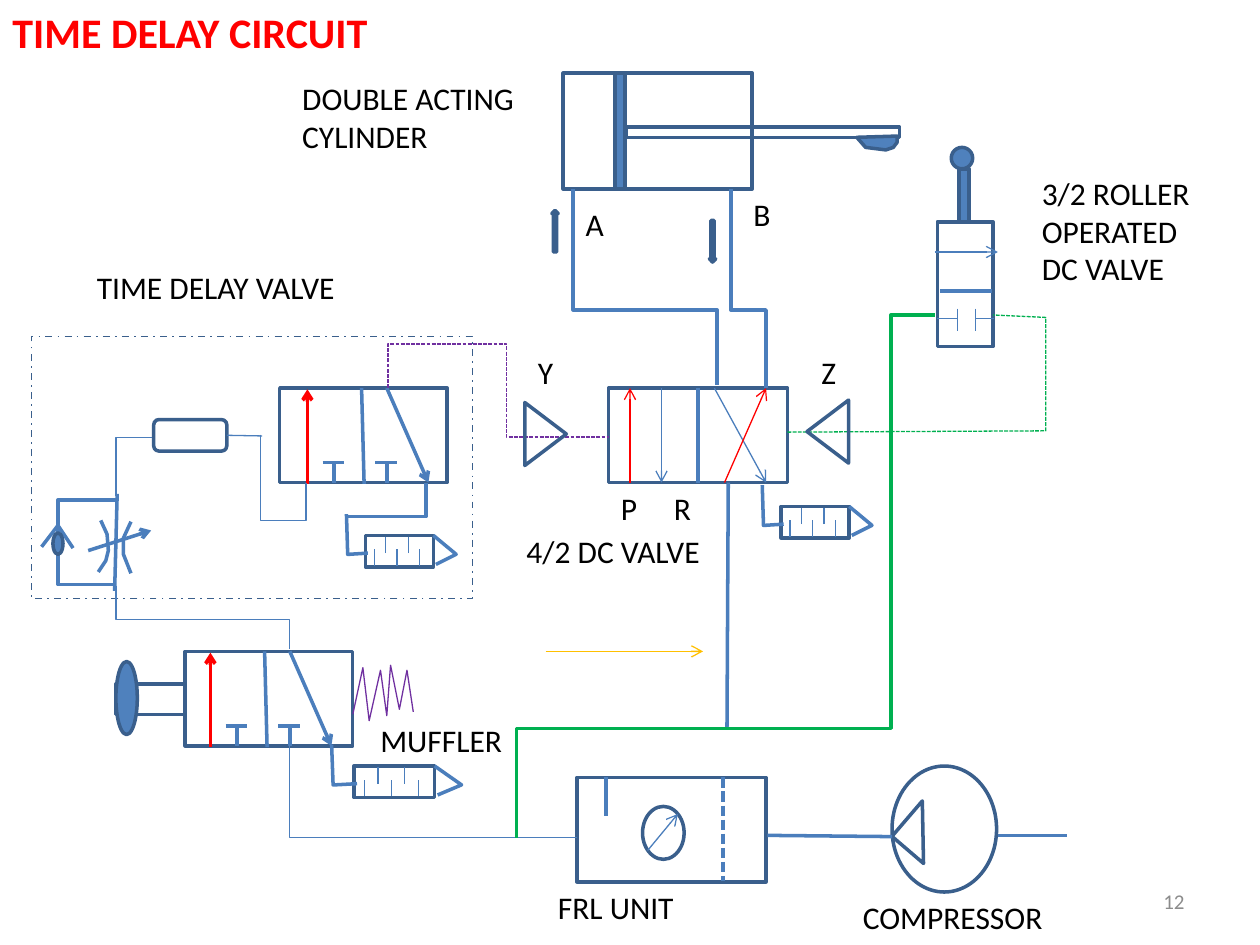
from lxml import etree
from pptx import Presentation
from pptx import util as u
from pptx.dml.color import RGBColor
from pptx.enum import dml, shapes, text
from pptx.oxml.ns import qn

Inches = u.Inches
S = shapes.MSO_SHAPE
DASH = dml.MSO_LINE.SQUARE_DOT
OUTLINE = RGBColor(0x3A, 0x5F, 0x8C)
PIPE = RGBColor(0x4B, 0x7E, 0xBC)
SOLID = RGBColor(0x4F, 0x81, 0xBD)
RED = RGBColor(0xFF, 0, 0)
GREEN = RGBColor(0, 0xB0, 0x50)
PURPLE = RGBColor(0x70, 0x30, 0xA0)
AMBER = RGBColor(0xFF, 0xC0, 0)
BLACK = RGBColor(0, 0, 0)
GREY = RGBColor(0x8C, 0x8C, 0x8C)
THIN, THICK = 0.75, 2

prs = Presentation()
prs.slide_width, prs.slide_height = Inches(10), Inches(7.5)
slide = prs.slides.add_slide(prs.slide_layouts[6])


def add_box(kind, x, y, w, h, fill=None, rot=0, width=THICK, dash=None):
    sp = slide.shapes.add_shape(kind, Inches(x), Inches(y), Inches(w), Inches(h))
    sp.shadow.inherit = False
    sp.rotation = rot
    if fill is None:
        sp.fill.background()
    else:
        sp.fill.solid()
        sp.fill.fore_color.rgb = fill
    sp.line.color.rgb = OUTLINE
    sp.line.width = u.Pt(width)
    if dash is not None:
        sp.line.dash_style = dash
    return sp


def add_path(points, color=PIPE, width=THICK, dash=None, arrow=False):
    pts = [(Inches(x), Inches(y)) for x, y in points]
    if len(pts) == 2:
        sp = slide.shapes.add_connector(shapes.MSO_CONNECTOR.STRAIGHT, *pts[0], *pts[1])
    else:
        fb = slide.shapes.build_freeform(*pts[0])
        fb.add_line_segments(pts[1:], close=False)
        sp = fb.convert_to_shape()
        sp.fill.background()
    sp.line.color.rgb = color
    sp.line.width = u.Pt(width)
    if dash is not None:
        sp.line.dash_style = dash
    sp_pr = sp._element.spPr
    if arrow:
        etree.SubElement(sp_pr.find(qn("a:ln")), qn("a:tailEnd"), type="arrow")
    etree.SubElement(sp_pr, qn("a:effectLst"))
    return sp


add_box(S.RECTANGLE, 0.25, 2.67, 3.5, 2.08, width=1, dash=dml.MSO_LINE.DASH_DOT)

valve = add_box(S.RECTANGLE, 4.83, 3.08, 1.42, 0.75)
divider = add_path([(5.54, 3.08), (5.54, 3.83)])
divider.begin_connect(valve, 0)
divider.end_connect(valve, 2)
for start, end, color in [
    ((5, 3.83), (5, 3.08), RED),
    ((5.25, 3.08), (5.25, 3.83), PIPE),
    ((5.67, 3.08), (6.08, 3.83), PIPE),
    ((5.75, 3.83), (6.08, 3.08), RED),
]:
    add_path([start, end], color, THIN, arrow=True)

for left, top, x in [(2.22, 3.08, 2.24), (1.47, 5.17, 1.47)]:
    add_box(S.RECTANGLE, left, top, 1.33, 0.75)
    add_path([(x + 0.65, top + 0.76), (x + 0.63, top)])
    add_path([(x + 0.2, top + 0.76), (x + 0.2, top + 0.01)], RED, arrow=True)
    add_path([(x + 0.83, top), (x + 1.16, top + 0.75)], arrow=True)
    for stem in (x + 0.41, x + 0.83):
        add_path([(stem, top + 0.75), (stem, top + 0.59)])
        add_path([(stem - 0.09, top + 0.59), (stem + 0.08, top + 0.59)])

for x, y, w in [(2.81, 6.08, 0.64), (6.2, 4.02, 0.54), (2.9, 4.25, 0.54)]:
    k = w / 0.54
    add_box(S.RECTANGLE, x, y, w, 0.25)
    for i in range(5):
        tick = x + k * (0.07 + 0.09 * i)
        upper = y + (0.01 if i % 2 else 0.11)
        add_path([(tick, upper + 0.13), (tick, upper)], width=THIN)
    add_path([(x + w, y), (x + 0.72 * k, y + 0.15), (x + 0.56 * k, y + 0.23)])
    add_path([(x - 0.15 * k, y - 0.17), (x - 0.14 * k, y + 0.15), (x + 0.02 * k, y + 0.14)])

add_box(S.RECTANGLE, 4.58, 6.17, 1.5, 0.83)
add_path([(5.74, 6.17), (5.74, 6.99)], dash=DASH)
add_box(S.OVAL, 5.1, 6.4, 0.33, 0.42)
add_path([(5.14, 6.75), (5.38, 6.46)], width=THIN, arrow=True)
add_path([(4.81, 6.17), (4.81, 6.48)])
add_box(S.OVAL, 7.08, 6.08, 0.83, 1)
add_box(S.RIGHT_TRIANGLE, 7.16, 6.42, 0.33, 0.37, rot=40.6)
add_path([(7.08, 6.64), (6.09, 6.63)])
add_path([(7.92, 6.63), (8.47, 6.63)])

add_box(S.RECTANGLE, 7.44, 1.76, 0.44, 0.99)
add_path([(7.46, 2.31), (7.87, 2.31)])
add_box(S.RECTANGLE, 7.61, 1.34, 0.08, 0.42, SOLID)
add_box(S.OVAL, 7.55, 1.17, 0.17, 0.17, SOLID)
add_path([(7.42, 2), (7.92, 2)], width=THIN, arrow=True)
for port, stop in [(7.44, 7.6), (7.89, 7.74)]:
    add_path([(port, 2.53), (stop, 2.53)], width=THIN)
    add_path([(stop, 2.45), (stop, 2.63)], width=THIN)

add_box(S.RECTANGLE, 4.47, 0.58, 1.5, 0.92)
add_box(S.RECTANGLE, 4.88, 0.58, 0.08, 0.92, SOLID)
add_box(S.RECTANGLE, 4.97, 1.01, 2.17, 0.08)
cam = [(6.87, 1.17), (7.03, 1.19), (7.09, 1.17), (7.12, 1.13), (7.12, 1.08)]
fb = slide.shapes.build_freeform(Inches(6.8), Inches(1.09))
fb.add_line_segments([(Inches(x), Inches(y)) for x, y in cam])
sp = fb.convert_to_shape()
sp.shadow.inherit = False
sp.fill.solid()
sp.fill.fore_color.rgb = SOLID
sp.line.color.rgb = OUTLINE
sp.line.width = u.Pt(THICK)

add_box(S.UP_ARROW, 4.38, 1.67, 0.05, 0.33, SOLID)
add_box(S.DOWN_ARROW, 5.63, 1.75, 0.05, 0.33, SOLID)
add_path([(4.33, 5.17), (5.58, 5.17)], AMBER, THIN, arrow=True)

add_box(S.RECTANGLE, 0.92, 5.43, 0.55, 0.24)
add_box(S.OVAL, 0.92, 5.25, 0.17, 0.58, SOLID)
spring = [(2.8, 5.67), (2.88, 5.3), (2.93, 5.72), (3.02, 5.32), (3.07, 5.68),
          (3.1, 5.28), (3.17, 5.63), (3.23, 5.32), (3.28, 5.65)]
add_path(spring, PURPLE, THIN)

for points in [
    [(0.8, 4.13), (0.85, 4.24), (0.86, 4.37), (0.84, 4.45), (0.78, 4.54)],
    [(1.04, 4.14), (0.98, 4.27), (0.98, 4.4), (1.04, 4.55)],
    [(0.91, 4.69), (0.93, 3.92)],
    [(0.93, 3.97), (0.46, 3.97), (0.46, 4.64), (0.91, 4.64)],
    [(0.33, 4.34), (0.46, 4.17), (0.58, 4.35)],
]:
    add_path(points)
add_path([(0.7, 4.37), (1.2, 4.21)], arrow=True)
add_box(S.OVAL, 0.42, 4.23, 0.08, 0.17, SOLID)

tank = add_box(S.ROUNDED_RECTANGLE, 1.22, 3.33, 0.58, 0.25)
sp = add_path([(2.08, 3.46), (1.8, 3.46)], width=THIN)
sp.end_connect(tank, 3)

for points, color, width, dash in [
    ([(5.8, 1.5), (5.8, 2.46), (6.08, 2.46), (6.08, 3.08)], PIPE, THICK, None),
    ([(4.55, 1.5), (4.55, 2.46), (5.69, 2.46), (5.69, 3.06)], PIPE, THICK, None),
    ([(5.78, 3.83), (5.77, 5.78)], PIPE, THICK, None),
    ([(2.75, 4.1), (3.38, 4.1), (3.38, 3.83)], PIPE, THICK, None),
    ([(1.21, 3.47), (0.92, 3.47), (0.92, 3.94)], PIPE, THIN, None),
    ([(0.92, 4.65), (0.92, 4.92), (2.3, 4.92), (2.3, 5.15)], PIPE, THIN, None),
    ([(2.3, 5.92), (2.3, 6.65), (4.58, 6.65)], PIPE, THIN, None),
    ([(2.07, 3.45), (2.07, 4.13), (2.43, 4.13), (2.43, 3.83)], PIPE, THIN, None),
    ([(3.08, 3.08), (3.08, 2.73), (4.02, 2.73), (4.02, 3.47), (4.83, 3.47)], PURPLE, THIN, DASH),
    ([(6.25, 3.43), (8.3, 3.42), (8.3, 2.52), (7.88, 2.5)], GREEN, THIN, DASH),
    ([(4.1, 6.65), (4.1, 5.78), (7.07, 5.78), (7.07, 2.5), (7.42, 2.5)], GREEN, THICK, None),
]:
    add_path(points, color, width, dash)

for x, y, rot in [(4.08, 3.28, 90), (6.32, 3.26, 270)]:
    add_box(S.ISOSCELES_TRIANGLE, x, y, 0.5, 0.33, rot=rot)

for words, x, y, w, h, size, color in [
    ("TIME DELAY CIRCUIT", 0, 0, 9.08, 0.5, 24, RED),
    ("DOUBLE ACTING CYLINDER", 2.3, 0.58, 2.25, 1.01, 18, BLACK),
    ("3/2 ROLLER OPERATED DC VALVE", 8.17, 1.33, 1.5, 1.01, 18, BLACK),
    ("TIME DELAY VALVE", 0.67, 2.08, 2.33, 0.71, 18, BLACK),
    ("4/2 DC VALVE", 4.08, 4.17, 1.75, 0.4, 18, BLACK),
    ("MUFFLER", 2.92, 5.67, 1.83, 0.42, 18, BLACK),
    ("FRL UNIT", 4.33, 7, 1.92, 0.4, 18, BLACK),
    ("COMPRESSOR", 6.75, 7.08, 2.25, 0.42, 18, BLACK),
    ("A", 4.55, 1.58, 0.25, 0.4, 18, BLACK),
    ("B", 5.88, 1.5, 0.25, 0.42, 18, BLACK),
    ("P", 4.83, 3.83, 0.33, 0.4, 18, BLACK),
    ("R", 5.25, 3.83, 0.25, 0.4, 18, BLACK),
    ("Y", 4.17, 2.75, 0.42, 0.4, 18, BLACK),
    ("Z", 6.42, 2.75, 0.33, 0.4, 18, BLACK),
    ("12", 7.17, 6.95, 2.33, 0.4, 12, GREY),
]:
    tf = slide.shapes.add_textbox(Inches(x), Inches(y), Inches(w), Inches(h)).text_frame
    tf.word_wrap = True
    tf.text = words
    p = tf.paragraphs[0]
    if color == GREY:
        tf.vertical_anchor = text.MSO_ANCHOR.MIDDLE
        p.alignment = text.PP_ALIGN.RIGHT
    else:
        tf.auto_size = text.MSO_AUTO_SIZE.SHAPE_TO_FIT_TEXT
    r = p.runs[0]
    r.font.name = "Calibri"
    r.font.size = u.Pt(size)
    r.font.bold = color == RED
    r.font.color.rgb = color

prs.save("out.pptx")
